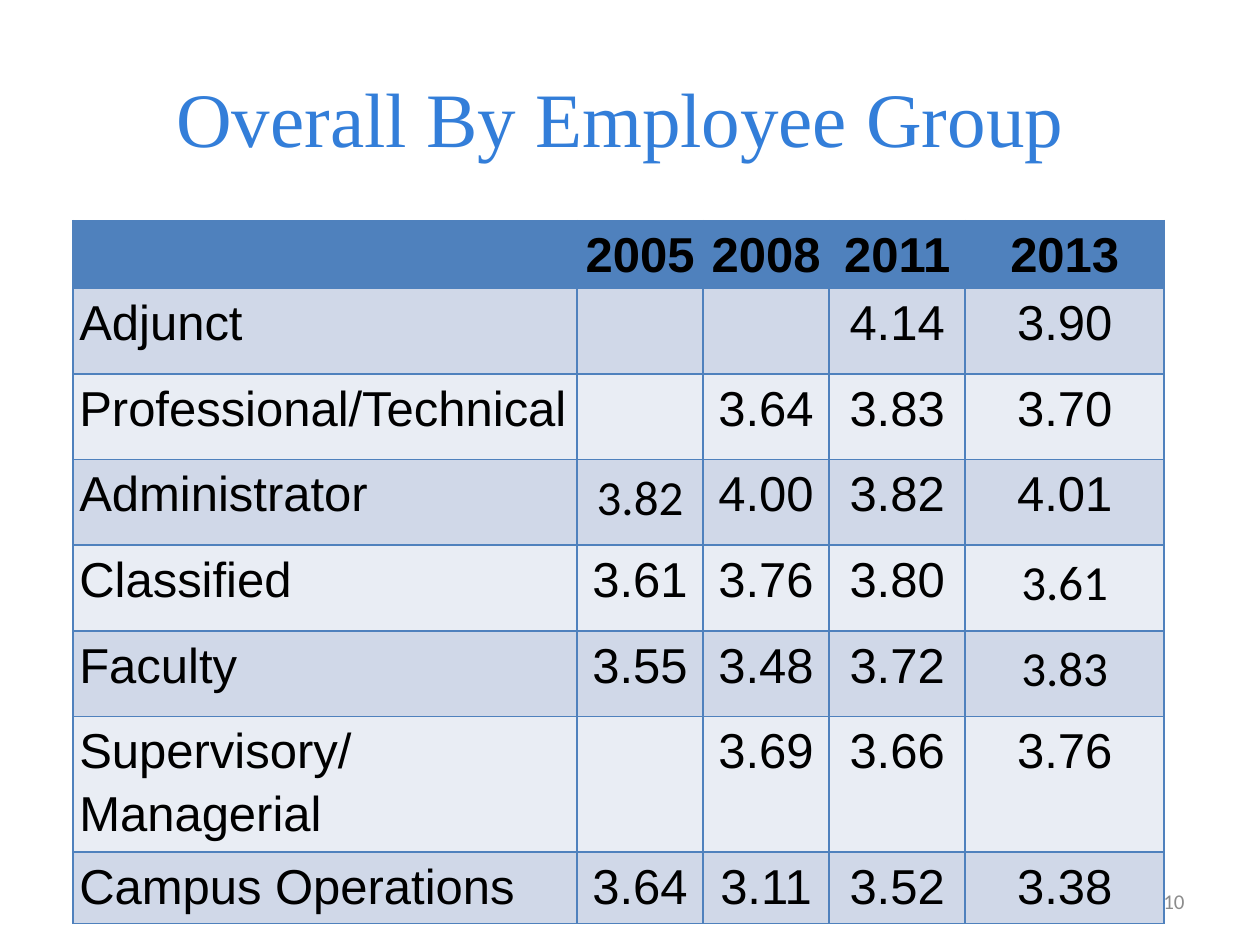
"""Build the slide of overall scores by employee group."""
from lxml import etree
from pptx import Presentation
from pptx.dml.color import RGBColor
from pptx.enum.text import MSO_ANCHOR, PP_ALIGN
from pptx.oxml.ns import qn
from pptx.util import Inches, Pt

LEFT, CENTER, RIGHT = PP_ALIGN.LEFT, PP_ALIGN.CENTER, PP_ALIGN.RIGHT
MIDDLE = MSO_ANCHOR.MIDDLE

COLORS = {
    "title": "337ED9",
    "text": "000000",
    "number": "8C8C8C",
    "header": "4F81BD",
    "border": "4F81BD",
    "odd": "D0D8E8",
    "even": "E9EDF4",
}
FORMATS = {
    "title": {"name": "Times New Roman", "size": Pt(44)},
    "text": {"name": "Arial", "size": Pt(28), "bold": False},
    "number": {"name": "Calibri", "size": Pt(12)},
}
COL_WIDTHS = [4, 1, 1, 1.08, 1.58]
ROW_HEIGHTS = [0.33] + [0.68] * 6 + [0.57]
SCORES = [
    ["", "2005", "2008", "2011", "2013"],
    ["Adjunct", "", "", "4.14", "3.90"],
    ["Professional/Technical", "", "3.64", "3.83", "3.70"],
    ["Administrator", "3.82", "4.00", "3.82", "4.01"],
    ["Classified", "3.61", "3.76", "3.80", "3.61"],
    ["Faculty", "3.55", "3.48", "3.72", "3.83"],
    ["Supervisory/Managerial", "", "3.69", "3.66", "3.76"],
    ["Campus Operations", "3.64", "3.11", "3.52", "3.38"],
]
CALIBRI_CELLS = {(3, 1), (4, 4), (5, 4)}


class SlideBuilder:
    """Hold the style and the current slide."""

    def __init__(self, slide, colors, formats):
        self.slide = slide
        self.colors = colors
        self.formats = formats

    def paragraph(self, tf, text, style, align, **changes):
        """Put one formatted paragraph into a text frame."""
        p = tf.paragraphs[0]
        p.alignment = align
        r = p.add_run()
        r.text = text
        for name, value in {**self.formats[style], **changes}.items():
            setattr(r.font, name, value)
        r.font.color.rgb = RGBColor.from_string(self.colors[style])
        return p

    def text(self, box, text, style, align):
        """Add a wrapped, vertically centred text box."""
        sp = self.slide.shapes.add_textbox(*map(Inches, box))
        tf = sp.text_frame
        tf.word_wrap = True
        tf.vertical_anchor = MIDDLE
        self.paragraph(tf, text, style, align)

    def border(self, cell):
        """Draw a thin line on each side of a cell."""
        tcPr = cell._tc.get_or_add_tcPr()
        for side in ("a:lnL", "a:lnR", "a:lnT", "a:lnB"):
            ln = etree.SubElement(tcPr, qn(side), w=str(Pt(1)))
            fill = etree.SubElement(ln, qn("a:solidFill"))
            etree.SubElement(fill, qn("a:srgbClr"), val=self.colors["border"])

    def cell(self, cell, text, row, col):
        """Format one table cell and fill in its text."""
        self.border(cell)
        band = "header" if row == 0 else "odd" if row % 2 else "even"
        cell.fill.solid()
        cell.fill.fore_color.rgb = RGBColor.from_string(self.colors[band])
        if not text:
            return
        cell.margin_left = cell.margin_right = Inches(0.05)
        cell.margin_top = cell.margin_bottom = 0
        font = "Calibri" if (row, col) in CALIBRI_CELLS else "Arial"
        p = self.paragraph(cell.text_frame, text, "text", CENTER if col else LEFT,
                           name=font, bold=row == 0)
        p.line_spacing = 1.15

    def table(self, left, top, widths, heights, rows):
        """Add a banded table."""
        box = map(Inches, (left, top, sum(widths), sum(heights)))
        table = self.slide.shapes.add_table(len(rows), len(widths), *box).table
        for column, width in zip(table.columns, widths):
            column.width = Inches(width)
        for row, height in zip(table.rows, heights):
            row.height = Inches(height)
        for i, values in enumerate(rows):
            for j, value in enumerate(values):
                self.cell(table.cell(i, j), value, i, j)


def main():
    """Build and save the slide."""
    prs = Presentation()
    prs.slide_width, prs.slide_height = Inches(10), Inches(7.5)
    s = SlideBuilder(prs.slides.add_slide(prs.slide_layouts[6]), COLORS, FORMATS)
    s.text((0.5, 0.3, 9, 1.25), "Overall By Employee Group ", "title", CENTER)
    s.table(0.58, 1.75, COL_WIDTHS, ROW_HEIGHTS, SCORES)
    s.text((7.17, 6.95, 2.33, 0.4), "10", "number", RIGHT)
    prs.save("out.pptx")


if __name__ == "__main__":
    main()
